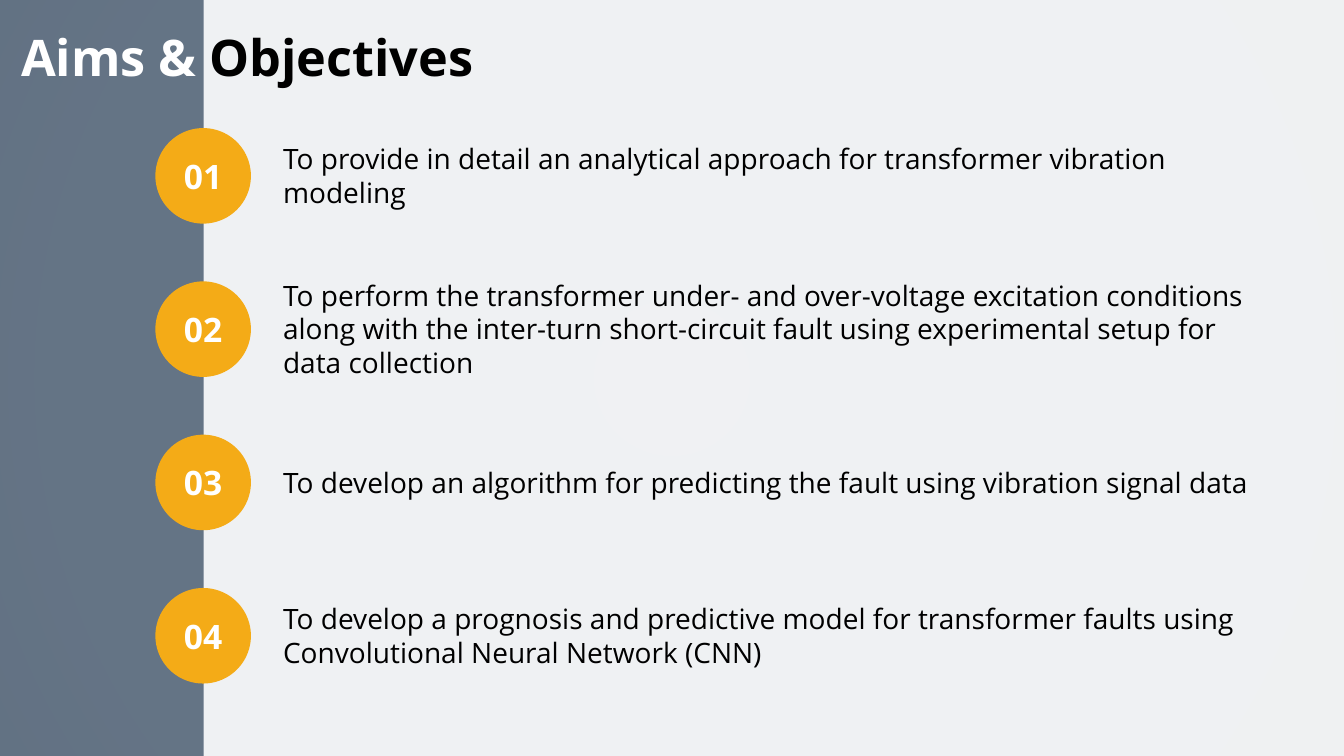
from dataclasses import dataclass

from lxml.etree import SubElement
from pptx import Presentation
from pptx.dml.color import RGBColor
from pptx.enum.shapes import MSO_SHAPE
from pptx.enum.text import MSO_ANCHOR, MSO_AUTO_SIZE, PP_ALIGN
from pptx.oxml import parse_xml
from pptx.oxml.ns import nsdecls, qn
from pptx.util import Emu, Pt

PX = 9525  # EMU per px, 96 px to the inch


@dataclass(frozen=True)
class Theme:
    font: str = "Open Sans"
    white: str = "FFFFFF"
    black: str = "000000"
    slate: str = "57687B"
    amber: str = "F4AB17"
    backdrop: tuple = ((0, "FFFFFF"), (81, "EEEEEE"), (100, "D9D9D9"))
    title_size: int = 36
    badge_size: int = 24
    body_size: int = 20


class SlideBuilder:
    def __init__(self, slide, theme):
        self.slide = slide
        self.theme = theme

    def background(self):
        stops = "".join(
            f'<a:gs pos="{position * 1000}"><a:srgbClr val="{color}"/></a:gs>'
            for position, color in self.theme.backdrop)
        common = self.slide.element.find(qn("p:cSld"))
        common.insert(0, parse_xml(
            f'<p:bg {nsdecls("p", "a")}><p:bgPr><a:gradFill><a:gsLst>{stops}</a:gsLst>'
            '<a:path path="circle"><a:fillToRect l="50000" t="50000" r="50000" b="50000"/>'
            '</a:path></a:gradFill><a:effectLst/></p:bgPr></p:bg>'))

    def place(self, shape, left, top, width, height):
        shape.left, shape.top = Emu(left * PX), Emu(top * PX)
        shape.width, shape.height = Emu(width * PX), Emu(height * PX)

    def shape(self, kind, color, box):
        shape = self.slide.shapes.add_shape(kind, *(Emu(length * PX) for length in box))
        shape.shadow.inherit = False
        shape.fill.solid()
        shape.fill.fore_color.rgb = RGBColor.from_string(color)
        shape.line.fill.background()
        return shape

    def panel(self, color, opacity, box, layer):
        """Translucent rectangle kept behind the placeholders."""
        shape = self.shape(MSO_SHAPE.RECTANGLE, color, box)
        color_node = shape.element.spPr.find(qn("a:solidFill"))[0]
        SubElement(color_node, qn("a:alpha")).set("val", str(opacity * 1000))
        tree = self.slide.shapes.element
        tree.insert(2 + layer, shape.element)  # after the two group property nodes

    def style(self, font, size, color, bold=False):
        font.name, font.size, font.bold = self.theme.font, Pt(size), bold
        if color:
            font.color.rgb = RGBColor.from_string(color)

    def title(self, parts, box):
        title = self.slide.shapes.title
        self.place(title, *box)
        title.text_frame.auto_size = MSO_AUTO_SIZE.SHAPE_TO_FIT_TEXT
        paragraph = title.text_frame.paragraphs[0]
        paragraph.alignment = PP_ALIGN.CENTER
        for text, color in parts:
            run = paragraph.add_run()
            run.text = text
            self.style(run.font, self.theme.title_size, color, bold=True)

    def badge(self, label, box):
        shape = self.shape(MSO_SHAPE.OVAL, self.theme.amber, box)
        shape.text_frame.vertical_anchor = MSO_ANCHOR.MIDDLE
        paragraph = shape.text_frame.paragraphs[0]
        paragraph.text = label
        paragraph.alignment = PP_ALIGN.CENTER
        self.style(paragraph.font, self.theme.badge_size, self.theme.white, bold=True)

    def objective(self, placeholder, text, box):
        self.place(placeholder, *box)
        frame = placeholder.text_frame
        frame.auto_size = MSO_AUTO_SIZE.SHAPE_TO_FIT_TEXT
        frame.vertical_anchor = MSO_ANCHOR.MIDDLE
        paragraph = frame.paragraphs[0]
        paragraph.text = text
        paragraph.space_before = Pt(0)
        self.style(paragraph.font, self.theme.body_size, self.theme.black)
        properties = paragraph._p.get_or_add_pPr()
        properties.set("marL", "0")
        properties.set("indent", "0")
        bullet = parse_xml(f'<a:buNone {nsdecls("a")}/>')
        properties.find(qn("a:spcBef")).addnext(bullet)


# Objective text and the number of lines it fills
OBJECTIVES = [
    ("To provide in detail an analytical approach for transformer vibration modeling", 2),
    ("To perform the transformer under- and over-voltage excitation conditions along with "
     "the inter-turn short-circuit fault using experimental setup for data collection", 3),
    ("To develop an algorithm for predicting the fault using vibration signal data", 1),
    ("To develop a prognosis and predictive model for transformer faults using "
     "Convolutional Neural Network (CNN)", 2),
]
WIDTH, HEIGHT = 1280, 720
SIDEBAR = 194
BADGE, BADGE_LEFT, BADGE_TOP, PITCH = 91, 148, 122, 146
TEXT_LEFT, TEXT_WIDTH, LINE_HEIGHT, INSETS = 260, 953, 32, 10


def main():
    presentation = Presentation()
    presentation.slide_width, presentation.slide_height = Emu(WIDTH * PX), Emu(HEIGHT * PX)
    # The Comparison layout has a title and four text placeholders
    layout = presentation.slide_layouts.get_by_name("Comparison")
    slide = presentation.slides.add_slide(layout)
    theme = Theme()
    builder = SlideBuilder(slide, theme)

    # Backdrop: slate sidebar and light content area
    builder.background()
    builder.panel(theme.slate, 91, (0, 0, WIDTH, HEIGHT), layer=0)
    builder.panel(theme.white, 90, (SIDEBAR, 0, WIDTH - SIDEBAR, HEIGHT), layer=1)

    # Title, changing colour at the sidebar edge
    builder.title([("Aims & ", theme.white), ("Objectives", theme.black)], (-18, 20, 507, 68))

    # Numbered objectives, each centred on its badge
    bodies = list(slide.placeholders)[1:]
    for index, (body, (text, lines)) in enumerate(zip(bodies, OBJECTIVES)):
        top = BADGE_TOP + index * PITCH
        height = INSETS + lines * LINE_HEIGHT
        builder.badge(f"{index + 1:02}", (BADGE_LEFT, top, BADGE, BADGE))
        builder.objective(body, text,
                          (TEXT_LEFT, top + (BADGE - height) // 2, TEXT_WIDTH, height))

    presentation.save("out.pptx")


if __name__ == "__main__":
    main()
